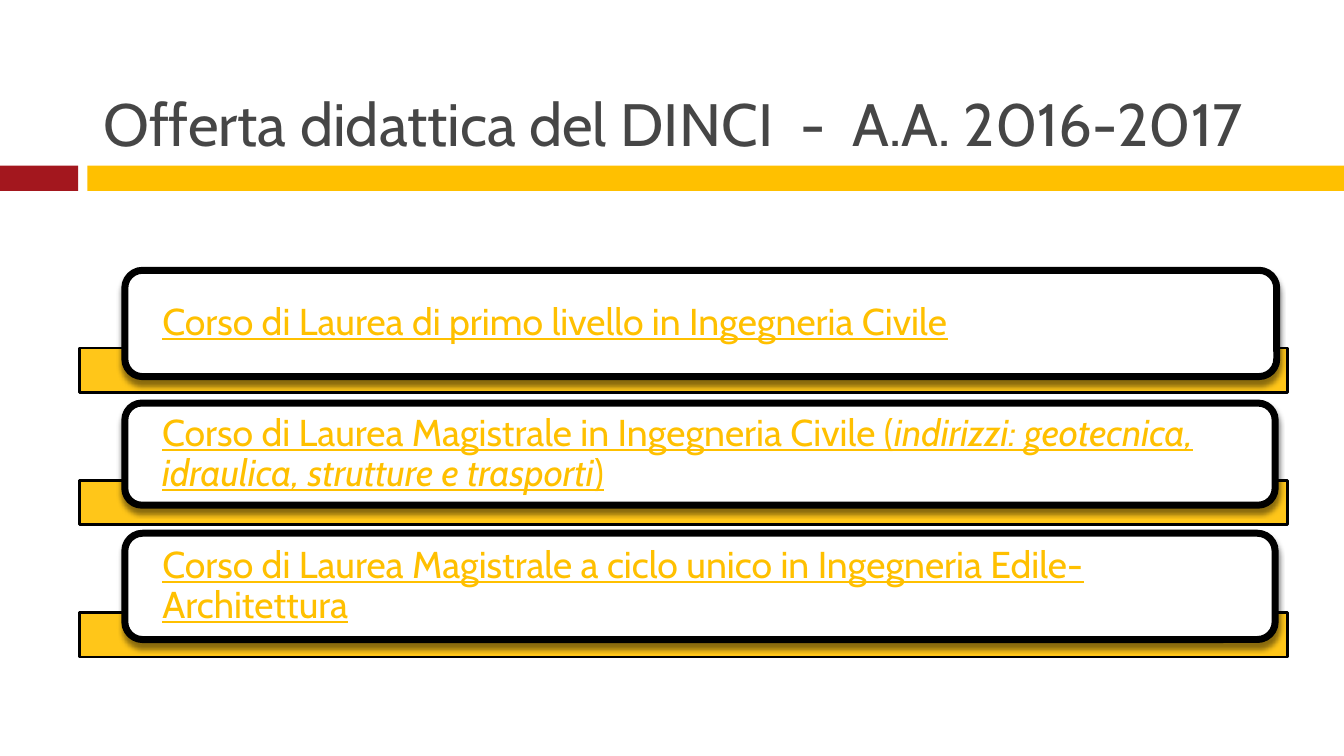
from lxml.etree import SubElement
from pptx import Presentation
from pptx.dml.color import RGBColor
from pptx.enum.shapes import MSO_SHAPE as Shape
from pptx.enum.text import MSO_ANCHOR as Anchor, PP_ALIGN as Align
from pptx.oxml.ns import qn
from pptx.util import Cm, Pt

COLORS = {"red": "A3171E", "gold": "FFC000", "white": "FFFFFF",
          "black": "000000", "gray": "464646"}


def add_text(para, text, size=20, color="gold", italic=False, underline=False):
    span = para.add_run()
    span.text = text
    span.font.name = "Cabin"
    span.font.size = Pt(size)
    span.font.italic = italic
    span.font.underline = underline
    span.font.color.rgb = RGBColor.from_string(COLORS[color])


def add_block(page, kind, left, top, width, height, fill, line=None):
    block = page.shapes.add_shape(kind, Cm(left), Cm(top), Cm(width), Cm(height))
    block.shadow.inherit = False
    block.fill.solid()
    block.fill.fore_color.rgb = RGBColor.from_string(COLORS[fill])
    if line:
        block.line.color.rgb = RGBColor.from_string(COLORS["black"])
        block.line.width = Pt(line)
    else:
        block.line.fill.background()
    return block


deck = Presentation()
deck.slide_width, deck.slide_height = Cm(25.4), Cm(14.29)
page = deck.slides.add_slide(deck.slide_layouts[6])

# Header band
add_block(page, Shape.RECTANGLE, 0, 3.13, 1.48, 0.48, "red")
add_block(page, Shape.RECTANGLE, 1.65, 3.13, 23.75, 0.48, "gold")

# Title
title = page.shapes.add_textbox(Cm(1.7), Cm(0.33), Cm(22.66), Cm(2.8))
title.text_frame.word_wrap = True
title.text_frame.vertical_anchor = Anchor.BOTTOM
add_text(title.text_frame.paragraphs[0],
         "Offerta didattica del DINCI  -  A.A. 2016-2017", size=32, color="gray")

# Courses: card top, width, height, and text pieces with their italic flag
courses = [
    (5.11, 21.77, 2.01,
     [("Corso di Laurea di primo livello in Ingegneria Civile", False)]),
    (7.62, 21.74, 1.93,
     [("Corso di Laurea Magistrale in Ingegneria Civile (", False),
      ("indirizzi: geotecnica, idraulica, strutture e trasporti", True),
      (")", False)]),
    (10.08, 21.74, 2.01,
     [("Corso di Laurea Magistrale a ciclo unico in Ingegneria "
       "Edile-Architettura", False)]),
]

for row, (top, width, height, pieces) in enumerate(courses):
    # Translucent bar behind the card
    bar = add_block(page, Shape.RECTANGLE, 1.5, 6.58 + 2.5 * row, 22.83, 0.84,
                    "gold", line=1.5)
    bar_color = bar.fill._xPr.find(qn("a:solidFill"))[0]
    SubElement(bar_color, qn("a:alpha"), val="90000")

    # Card with a soft shadow below
    card = add_block(page, Shape.ROUNDED_RECTANGLE, 2.36, top, width, height,
                     "white", line=3.75)
    effects = card._element.spPr.find(qn("a:effectLst"))
    shadow = SubElement(effects, qn("a:outerShdw"), blurRad=str(Pt(3)),
                        dist=str(Pt(2.4)), dir="5400000", rotWithShape="0")
    shade = SubElement(shadow, qn("a:srgbClr"), val=COLORS["black"])
    SubElement(shade, qn("a:alpha"), val="45000")

    # Course name
    frame = card.text_frame
    frame.word_wrap = True
    frame.vertical_anchor = Anchor.MIDDLE
    frame.margin_left = frame.margin_right = Cm(0.61)
    frame.margin_top = frame.margin_bottom = 0
    para = frame.paragraphs[0]
    para.alignment = Align.LEFT
    para.line_spacing = 0.9
    for text, italic in pieces:
        add_text(para, text, italic=italic, underline=True)

deck.save("out.pptx")
